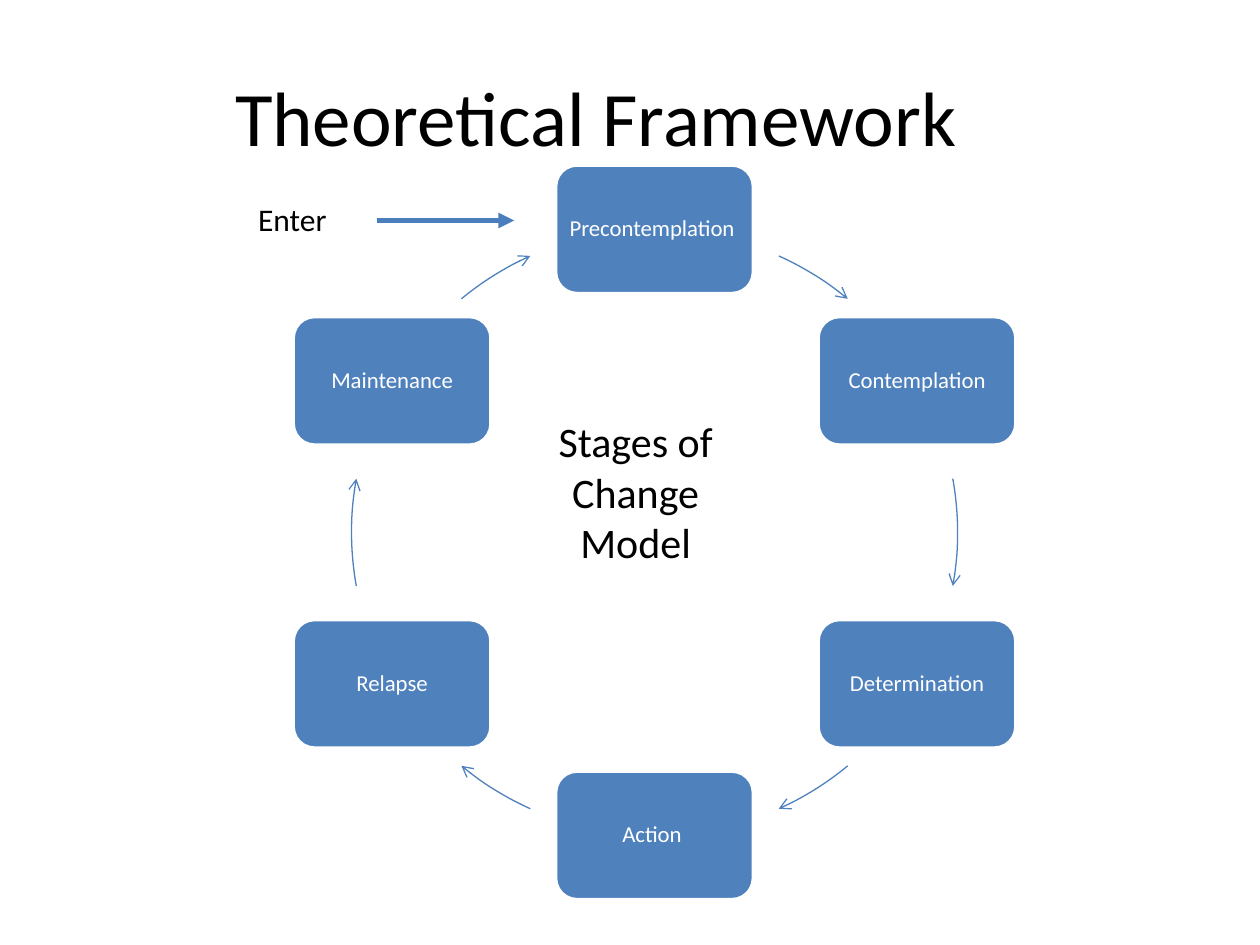
"""Build the slide on the stages of change model."""
import math

from lxml import etree
from pptx import Presentation
from pptx import util as u
from pptx.dml.color import RGBColor
from pptx.enum import shapes, text
from pptx.oxml import ns

HUES = {"fill": "4F81BD", "entry": "4B7EBC", "ink": "000000", "paper": "FFFFFF"}
STAGES = ["Precontemplation ", "Contemplation", "Determination",
          "Action ", "Relapse", "Maintenance"]
ARCS = [(24.2, 39.6), (79.8, 100.2), (140.4, 155.8),
        (204.2, 219.6), (259.8, 280.2), (320.4, 335.8)]


def hue(name):
    """Return the named colour."""
    return RGBColor.from_string(HUES[name])


def box(*sides):
    """Turn inches into lengths."""
    return [u.Inches(side) for side in sides]


def apply(item, values):
    """Set each attribute named in the values."""
    for name, value in values.items():
        setattr(item, name, value)


def write(shape, words, size, ink="ink", align=text.PP_ALIGN.CENTER, **frame):
    """Put one formatted paragraph in a shape."""
    apply(shape.text_frame, frame)
    para = shape.text_frame.paragraphs[0]
    para.alignment = align
    run = para.add_run()
    run.text = words
    apply(run.font, {"size": u.Pt(size), "name": "Calibri"})
    run.font.color.rgb = hue(ink)
    return para


def stroke(shape, color, width, tip=None):
    """Style an outline, with an arrowhead if one is named."""
    shape.line.color.rgb = hue(color)
    shape.line.width = u.Pt(width)
    if tip:
        line = shape.line._get_or_add_ln()
        etree.SubElement(line, ns.qn("a:tailEnd"), type=tip)


def add_title(slide, area):
    """Place the title in its area."""
    title = slide.shapes.title
    apply(title, dict(zip(("left", "top", "width", "height"), box(*area))))
    write(title, "Theoretical Framework", 44,
          vertical_anchor=text.MSO_ANCHOR.MIDDLE)


def add_stage(group, words, area):
    """Draw one stage of the cycle."""
    card = group.shapes.add_shape(shapes.MSO_SHAPE.ROUNDED_RECTANGLE, *box(*area))
    card.shadow.inherit = False
    card.fill.solid()
    card.fill.fore_color.rgb = hue("fill")
    stroke(card, "paper", 2)
    pad = u.Inches(0.05)
    para = write(card, words, 13, "paper", word_wrap=True,
                 vertical_anchor=text.MSO_ANCHOR.MIDDLE,
                 margin_left=pad, margin_right=pad,
                 margin_top=pad, margin_bottom=pad)
    para.line_spacing = 0.9


def add_arc(group, ends, area):
    """Draw one curved arrow, its ends in degrees clockwise from the top."""
    arc = group.shapes.add_shape(shapes.MSO_SHAPE.ARC, *box(*area))
    arc.shadow.inherit = False
    arc.fill.background()
    for spot, angle in enumerate(ends):
        arc.adjustments[spot] = (angle - 90) % 360 * 0.6
    stroke(arc, "fill", 0.75, "arrow")


def add_cycle(slide, area):
    """Set the stages and arrows around the circle that fills the area."""
    left, top, side, _ = area
    radius = side / 2
    wide, high = 1.57, 1.02
    group = slide.shapes.add_group_shape()
    for spot, (words, ends) in enumerate(zip(STAGES, ARCS)):
        turn = math.tau * spot / len(STAGES)
        across = left + radius + radius * math.sin(turn)
        down = top + radius - radius * math.cos(turn)
        add_stage(group, words, (across - wide / 2, down - high / 2, wide, high))
        add_arc(group, ends, area)


def add_entry(slide, area):
    """Draw the entry label and its arrow."""
    left, top, width, height = area
    arrow = slide.shapes.add_connector(
        shapes.MSO_CONNECTOR.STRAIGHT,
        *box(left + 1.04, top + 0.21, left + width, top + 0.21))
    stroke(arrow, "entry", 3, "triangle")
    etree.SubElement(arrow._element.spPr, ns.qn("a:effectLst"))
    label = slide.shapes.add_textbox(*box(left, top, 0.81, height))
    write(label, "Enter", 18, align=text.PP_ALIGN.LEFT, word_wrap=False,
          auto_size=text.MSO_AUTO_SIZE.SHAPE_TO_FIT_TEXT)


def add_center(slide, area):
    """Name the model inside the cycle."""
    label = slide.shapes.add_textbox(*box(*area))
    write(label, "Stages of Change Model", 24, word_wrap=True,
          auto_size=text.MSO_AUTO_SIZE.SHAPE_TO_FIT_TEXT)


def main():
    """Build and save the slide."""
    deck = Presentation()
    apply(deck, {"slide_width": u.Inches(10), "slide_height": u.Inches(7.5)})
    slide = deck.slides.add_slide(deck.slide_layouts.get_by_name("Title Only"))
    add_title(slide, (0.23, 0.29, 9, 1.25))
    add_cycle(slide, (2.79, 1.82, 4.81, 4.81))
    add_entry(slide, (1.95, 1.54, 2.13, 0.4))
    add_center(slide, (4.21, 3.25, 1.67, 1.31))
    deck.save("out.pptx")


if __name__ == "__main__":
    main()
